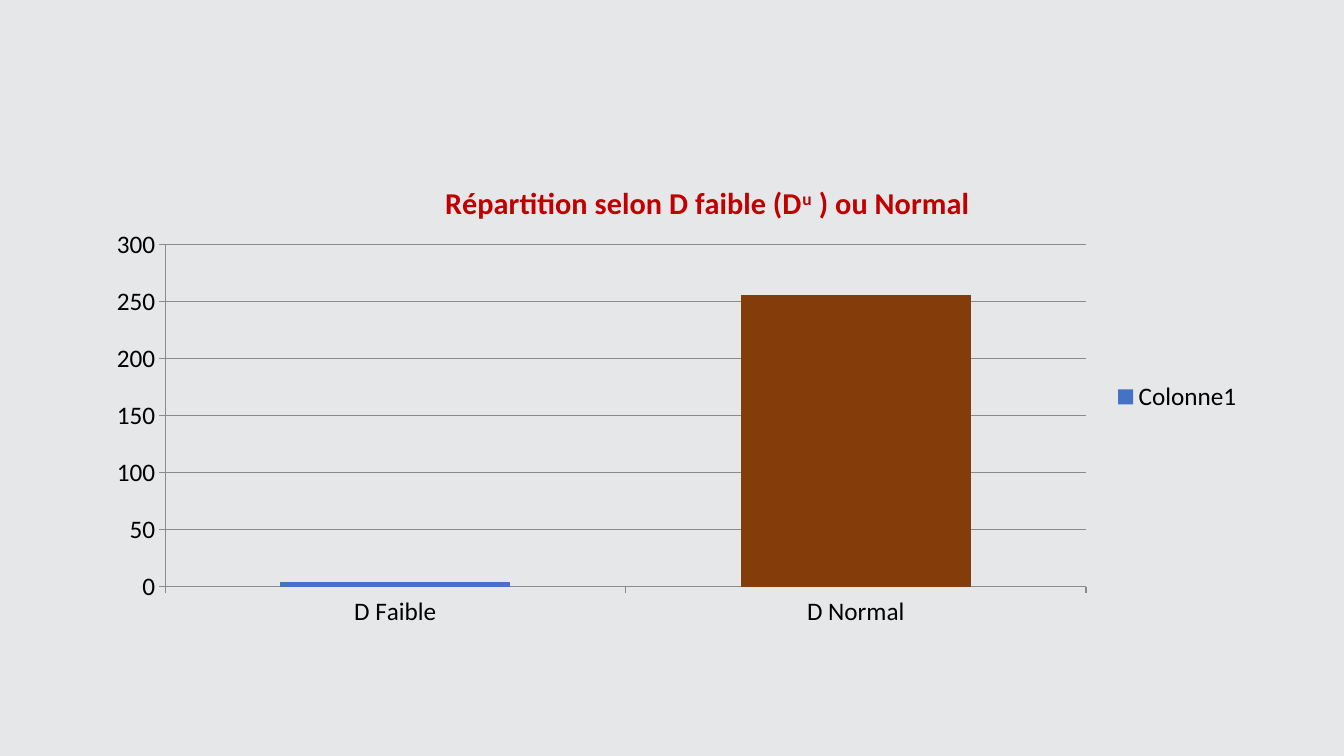
"""Build a slide with a column chart comparing weak and normal D counts."""
import pptx
import pptx.chart.data
import pptx.dml.color
import pptx.enum.chart
import pptx.oxml
import pptx.oxml.ns
import pptx.util

TITLE_PARTS = [("Répartition selon D faible (D", False), ("u", True), (" ) ou Normal", False)]
SERIES_NAME = "Colonne1"
COUNTS = {"D Faible": 4, "D Normal": 256}

PX = 914400 / 100.8
SLIDE_SIZE = (1344, 756)
CHART_BOX = (94, 157, 1159, 480)
PLOT_BOX = (165, 245, 921, 342)
TITLE_CORNER = (442, 180)

FONT = "Calibri"
BACKGROUND = pptx.dml.color.RGBColor(0xE6, 0xE7, 0xE9)
BLACK = pptx.dml.color.RGBColor(0, 0, 0)
RED = pptx.dml.color.RGBColor(0xC0, 0, 0)
BLUE = pptx.dml.color.RGBColor(0x44, 0x72, 0xC4)
BROWN = pptx.dml.color.RGBColor(0x84, 0x3C, 0x0B)
GREY = pptx.dml.color.RGBColor(0x8B, 0x8B, 0x8B)


def emu(px):
    return round(px * PX)


def style_font(font, size, color, bold=False):
    font.name = FONT
    font.size = pptx.util.Pt(size)
    font.color.rgb = color
    font.bold = bold


def place(element, index, box, inner=False):
    """Fix a chart part at a px box, as fractions of the chart."""
    left, top, width, height = CHART_BOX
    fractions = [(box[0] - left) / width, (box[1] - top) / height]
    fractions += [side / whole for side, whole in zip(box[2:], (width, height))]
    tags = '<c:layoutTarget val="inner"/>' if inner else ""
    tags += '<c:xMode val="edge"/><c:yMode val="edge"/>'
    tags += "".join(f'<c:{key} val="{value:.4f}"/>' for key, value in zip("xywh", fractions))
    for layout in element.findall(pptx.oxml.ns.qn("c:layout")):
        element.remove(layout)
    element.insert(index, pptx.oxml.parse_xml(
        f'<c:layout {pptx.oxml.ns.nsdecls("c")}><c:manualLayout>{tags}</c:manualLayout></c:layout>'))


def add_title(chart):
    title = chart.chart_title
    paragraph = title.text_frame.paragraphs[0]
    for text, raised in TITLE_PARTS:
        run = paragraph.add_run()
        run.text = text
        style_font(run.font, 21.6, RED, True)
        if raised:
            run._r.get_or_add_rPr().set("baseline", "30000")
    title.include_in_layout = False
    place(title._element, 1, TITLE_CORNER)


def add_counts_chart(slide):
    data = pptx.chart.data.CategoryChartData()
    data.categories = list(COUNTS)
    data.add_series(SERIES_NAME, list(COUNTS.values()))
    chart = slide.shapes.add_chart(
        pptx.enum.chart.XL_CHART_TYPE.COLUMN_CLUSTERED, *map(emu, CHART_BOX), data).chart
    style_font(chart.font, 18, BLACK)
    add_title(chart)

    columns = chart.plots[0]
    columns.gap_width = 100
    columns.vary_by_categories = False
    counts = columns.series[0]
    for part, color in ((counts, BLUE), (counts.points[1], BROWN)):
        part.format.fill.solid()
        part.format.fill.fore_color.rgb = color

    for axis in (chart.category_axis, chart.value_axis):
        axis.major_tick_mark = pptx.enum.chart.XL_TICK_MARK.OUTSIDE
        axis.format.line.color.rgb = GREY
    chart.value_axis.minimum_scale = 0
    chart.value_axis.maximum_scale = 300
    chart.value_axis.major_unit = 50
    chart.value_axis.has_major_gridlines = True
    chart.value_axis.major_gridlines.format.line.color.rgb = GREY

    chart.has_legend = True
    chart.legend.position = pptx.enum.chart.XL_LEGEND_POSITION.RIGHT
    chart.legend.include_in_layout = False
    place(chart._chartSpace.chart.plotArea, 0, PLOT_BOX, True)


def main():
    deck = pptx.Presentation()
    deck.slide_width, deck.slide_height = map(emu, SLIDE_SIZE)
    slide = deck.slides.add_slide(deck.slide_layouts[6])
    slide.background.fill.solid()
    slide.background.fill.fore_color.rgb = BACKGROUND
    add_counts_chart(slide)
    deck.save("out.pptx")


if __name__ == "__main__":
    main()
